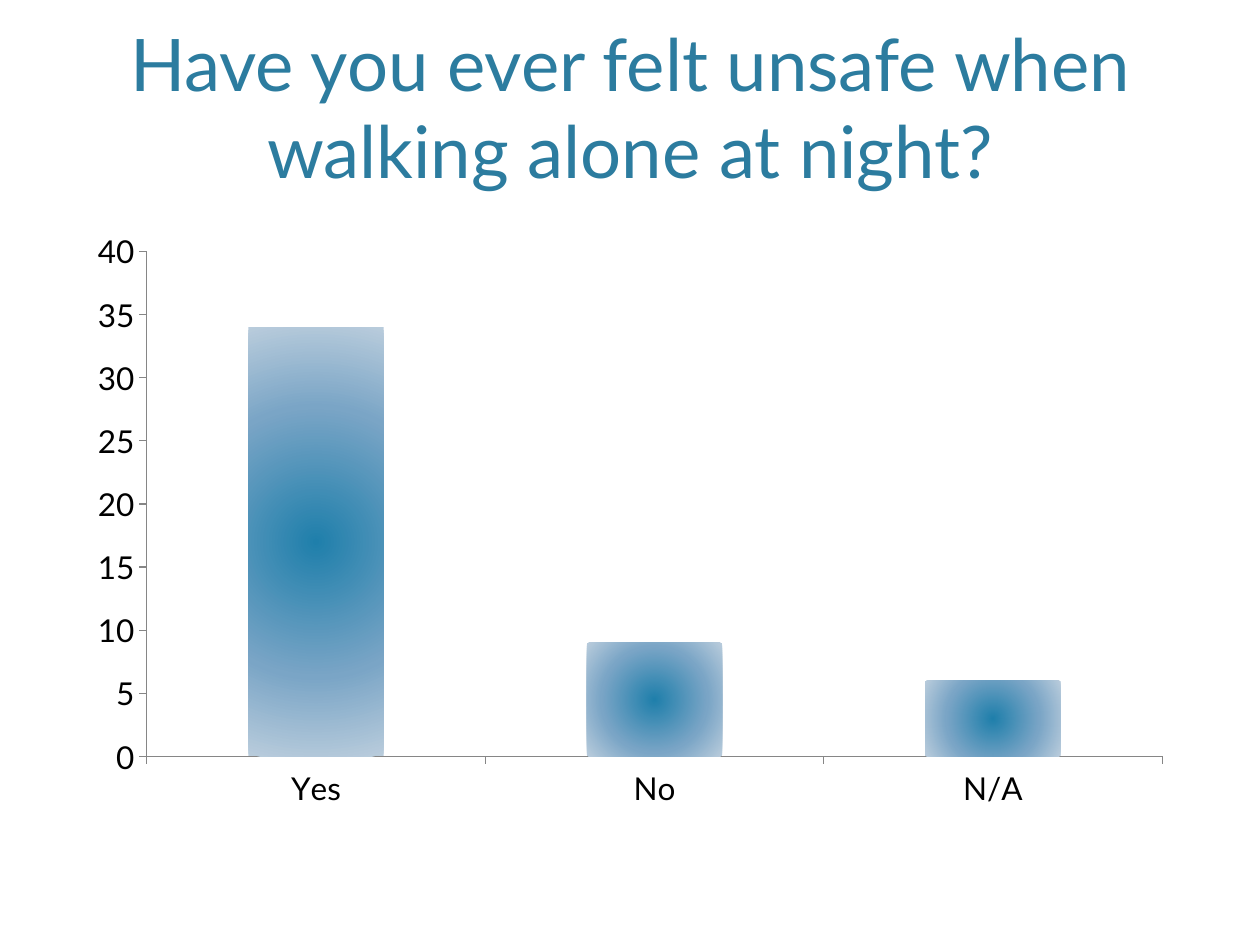
import pptx
import pptx.chart.data
import pptx.dml.color
import pptx.enum.chart
import pptx.enum.text
import pptx.oxml
import pptx.util
import lxml.etree

Pt = pptx.util.Pt
RGB = pptx.dml.color.RGBColor.from_string
enum = pptx.enum.chart
font = "Lato"
hues = {
    "title": "2C7C9F",
    "text": "000000",
    "axis": "868686",
    "core": "1F7FAB",
    "mid": "7AA5C6",
    "edge": "B9CCDC",
}

deck = pptx.Presentation()
deck.slide_width, deck.slide_height = Pt(720), Pt(540)
slide = deck.slides.add_slide(deck.slide_layouts[6])

title = slide.shapes.add_textbox(Pt(43.2), Pt(8.64), Pt(633.6), Pt(105.12))
frame = title.text_frame
frame.word_wrap = True
frame.vertical_anchor = pptx.enum.text.MSO_ANCHOR.BOTTOM
frame.text = "Have you ever felt unsafe when walking alone at night?"
para = frame.paragraphs[0]
para.alignment = pptx.enum.text.PP_ALIGN.CENTER
para.font.name = font
para.font.size = Pt(41.4)
para.font.color.rgb = RGB(hues["title"])

data = pptx.chart.data.CategoryChartData()
data.categories = ["Yes", "No", "N/A"]
data.add_series("Series 1", [34, 9, 6])
chart = slide.shapes.add_chart(
    enum.XL_CHART_TYPE.COLUMN_CLUSTERED,
    Pt(43.2), Pt(126), Pt(633.6), Pt(342), data,
).chart
chart.has_legend = False
chart.has_title = False
chart.font.name = font
chart.font.size = Pt(18)
chart.font.color.rgb = RGB(hues["text"])

for axis in (chart.category_axis, chart.value_axis):
    axis.has_major_gridlines = False
    axis.major_tick_mark = enum.XL_TICK_MARK.OUTSIDE
    axis.minor_tick_mark = enum.XL_TICK_MARK.NONE
    axis.format.line.color.rgb = RGB(hues["axis"])
    axis.format.line.width = Pt(0.75)
chart.value_axis.minimum_scale = 0
chart.value_axis.maximum_scale = 40
chart.value_axis.major_unit = 5

plot = chart.plots[0]
plot.gap_width = 150
plot.vary_by_categories = False
bars = plot.series[0]
bars.invert_if_negative = False
bars.format.fill.solid()
bars.format.fill.fore_color.rgb = RGB(hues["title"])
bars.format.line.fill.background()

stops = "".join(
    f'<a:gs pos="{pos}"><a:srgbClr val="{hues[name]}"/></a:gs>'
    for pos, name in ((0, "core"), (60000, "mid"), (100000, "edge"))
)
grad = pptx.oxml.parse_xml(
    '<a:gradFill xmlns:a="http://schemas.openxmlformats.org/drawingml/2006/main" rotWithShape="1">'
    f"<a:gsLst>{stops}</a:gsLst>"
    '<a:path path="circle"><a:fillToRect l="50000" t="50000" r="50000" b="50000"/></a:path>'
    "</a:gradFill>"
)
props = bars.format.fill._xPr
props.replace(props.solidFill, grad) if hasattr(props, "solidFill") else props.replace(props[0], grad)

deck.save("out.pptx")
